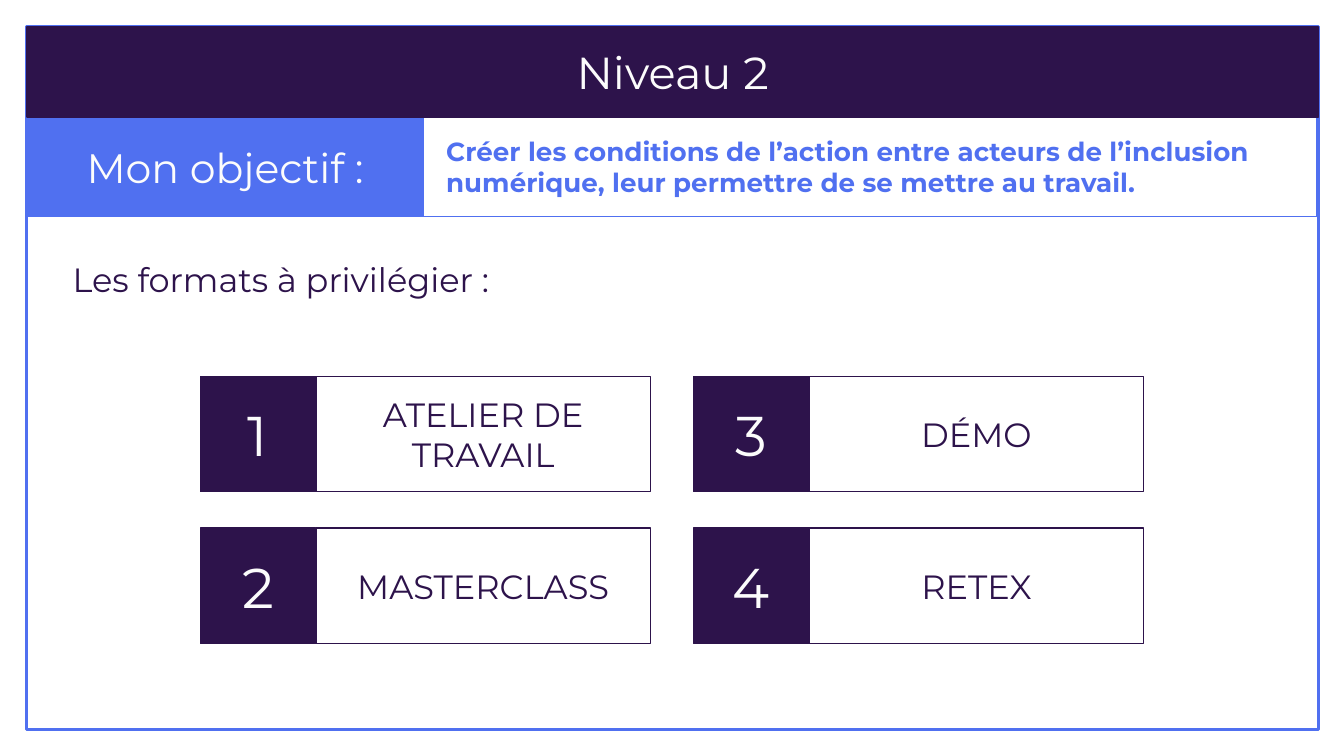
from pptx import Presentation
from pptx.dml.color import RGBColor
from pptx.enum.shapes import MSO_SHAPE
from pptx.enum.text import MSO_ANCHOR, PP_ALIGN
from pptx.util import Inches, Pt

RECT = MSO_SHAPE.RECTANGLE
MIDDLE = MSO_ANCHOR.MIDDLE
LEFT, CENTER = PP_ALIGN.LEFT, PP_ALIGN.CENTER
BLUE, PURPLE, WHITE = "5070F0", "2D134B", "FCFCFC"


def box(shapes, x, y, w, h, line, fill=None, weight=0.75):
    s = shapes.add_shape(RECT, Inches(x), Inches(y), Inches(w), Inches(h))
    s.shadow.inherit = False
    s.line.color.rgb = RGBColor.from_string(line)
    s.line.width = Pt(weight)
    if fill:
        s.fill.solid()
        s.fill.fore_color.rgb = RGBColor.from_string(fill)
    else:
        s.fill.background()
    return s


def write(s, text, size, color, align=CENTER, bold=False, indent=0):
    tf = s.text_frame
    tf.text = text
    tf.word_wrap = True
    tf.vertical_anchor = MIDDLE
    tf.margin_left = Inches(0.1 + indent)
    tf.margin_right = tf.margin_top = tf.margin_bottom = Inches(0.1)
    p = tf.paragraphs[0]
    p.alignment = align
    font = p.runs[0].font
    font.name = "Montserrat"
    font.size = Pt(size)
    font.bold = bold
    font.color.rgb = RGBColor.from_string(color)


# Widescreen 16:9 slide
prs = Presentation()
prs.slide_width, prs.slide_height = Inches(10), Inches(10 * 9 / 16)
slide = prs.slides.add_slide(prs.slide_layouts[6])
shapes = slide.shapes

# Outer frame
box(shapes, 0.2, 0.2, 9.61, 5.23, BLUE, weight=1.5)

# Objective row
s = box(shapes, 0.2, 0.87, 2.95, 0.74, BLUE, BLUE)
write(s, "Mon objectif :", 22, WHITE)
s = box(shapes, 3.14, 0.87, 6.66, 0.74, BLUE)
write(s, "Créer les conditions de l’action entre acteurs de l’inclusion "
      "numérique, leur permettre de se mettre au travail.",
      14, BLUE, LEFT, bold=True, indent=0.08)

# Title bar
s = box(shapes, 0.2, 0.2, 9.61, 0.67, PURPLE, PURPLE)
write(s, "Niveau 2", 24, WHITE)

# Formats heading
s = shapes.add_textbox(Inches(0.2), Inches(1.71), Inches(5.75), Inches(0.74))
write(s, "Les formats à privilégier :", 18, PURPLE, LEFT, indent=0.24)

# Numbered format cards, filled column by column
formats = ["ATELIER DE TRAVAIL", "MASTERCLASS", "DÉMO", "RETEX"]
side, label_width = 0.86, 2.49
for i, name in enumerate(formats):
    col, row = divmod(i, 2)
    x, y = 1.49 + col * 3.67, 2.8 + row * 1.13
    card = shapes.add_group_shape().shapes
    s = box(card, x + side, y, label_width, side, PURPLE)
    write(s, name, 18, PURPLE)
    s = box(card, x, y, side, side, PURPLE, PURPLE)
    write(s, str(i + 1), 30, WHITE)

prs.save("out.pptx")
